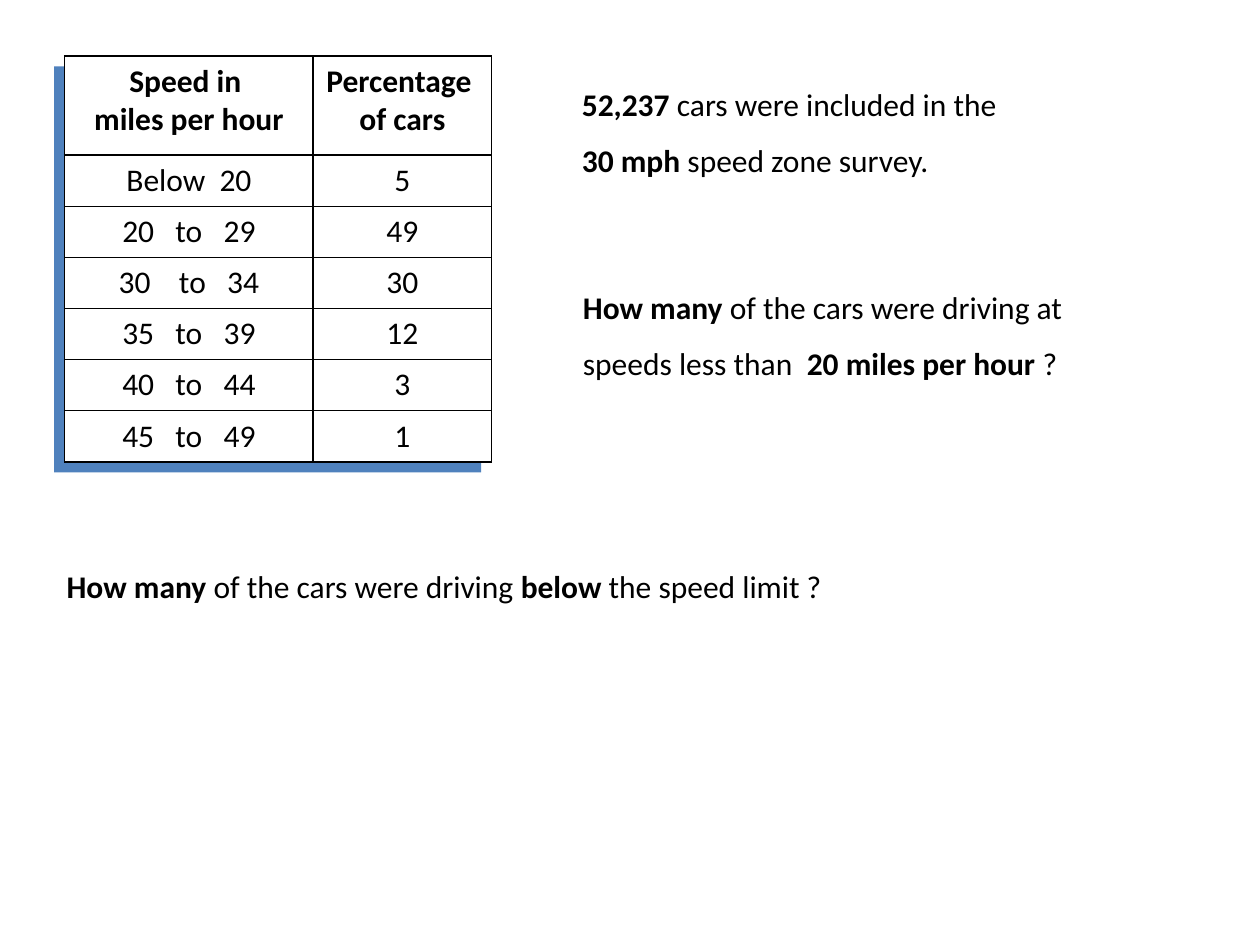
from lxml import etree
from pptx import Presentation
from pptx import util as u
from pptx.dml import color
from pptx.enum import shapes, text
from pptx.oxml import ns

COLORS = {"ink": "000000", "paper": "FFFFFF", "shade": "4F81BD"}
HEADER = (("Speed in ", "miles per hour"), ("Percentage ", "of cars"))
SPEEDS = (
    ("Below  20", 5),
    ("20   to   29", 49),
    ("30    to   34", 30),
    ("35   to   39", 12),
    ("40   to   44", 3),
    ("45   to   49", 1),
)
SURVEY = (
    (("52,237", True), (" cars were included in the", False)),
    (("30 mph ", True), ("speed zone survey.", False)),
)
BELOW_TWENTY = ((
    ("How many ", True),
    ("of the cars were driving at speeds less than  ", False),
    ("20 miles per hour ", True),
    ("?", False),
),)
BELOW_LIMIT = ((
    ("How many ", True),
    ("of the cars were driving ", False),
    ("below", True),
    (" the speed limit ?", False),
),)


def rgb(name):
    """Return the named colour."""
    return color.RGBColor.from_string(COLORS[name])


def write(frame, lines, align=None, spacing=None, size=18, font="Calibri"):
    """Fill a text frame with lines, each made of (wording, bold) spans."""
    for index, line in enumerate(lines):
        para = frame.add_paragraph() if index else frame.paragraphs[0]
        para.alignment, para.line_spacing = align, spacing
        for wording, bold in line:
            span = para.add_run()
            span.text = wording
            span.font.size, span.font.name = u.Pt(size), font
            span.font.bold = bold
            span.font.color.rgb = rgb("ink")


def outline(cell, width=1):
    """Draw a border on all four sides of a cell."""
    properties = cell._tc.get_or_add_tcPr()
    for index, side in enumerate(("lnL", "lnR", "lnT", "lnB")):
        line = etree.Element(ns.qn(f"a:{side}"), w=str(u.Pt(width)))
        fill = etree.SubElement(line, ns.qn("a:solidFill"))
        etree.SubElement(fill, ns.qn("a:srgbClr"), val=COLORS["ink"])
        properties.insert(index, line)


def add_backing(page, left, top, width, height, offset=6):
    """Place the solid block that peeks out below and left of the table."""
    block = page.shapes.add_shape(
        shapes.MSO_SHAPE.RECTANGLE,
        u.Pt(left - offset), u.Pt(top + offset), u.Pt(width), u.Pt(height))
    block.shadow.inherit = False
    block.fill.solid()
    block.fill.fore_color.rgb = rgb("shade")
    block.line.fill.background()


def add_speed_table(page, left, top, width, height, header=56.7, first=142):
    """Place the speed table and its backing in the given box."""
    add_backing(page, left, top, width, height)
    rows = [[[[(line, True)] for line in lines] for lines in HEADER]]
    rows += [[[[(str(value), False)]] for value in row] for row in SPEEDS]
    table = page.shapes.add_table(
        len(rows), len(HEADER),
        u.Pt(left), u.Pt(top), u.Pt(width), u.Pt(height)).table
    table.columns[0].width = u.Pt(first)
    table.columns[1].width = u.Pt(width - first)
    body = (height - header) / len(SPEEDS)
    for row_index, row in enumerate(rows):
        table.rows[row_index].height = u.Pt(body if row_index else header)
        for column_index, lines in enumerate(row):
            cell = table.cell(row_index, column_index)
            cell.fill.solid()
            cell.fill.fore_color.rgb = rgb("paper")
            outline(cell)
            write(cell.text_frame, lines, align=text.PP_ALIGN.CENTER)


def add_statement(page, lines, left, top, width, height):
    """Place a widely spaced statement or question in the given box."""
    box = page.shapes.add_textbox(
        u.Pt(left), u.Pt(top), u.Pt(width), u.Pt(height))
    box.text_frame.word_wrap = True
    box.text_frame.auto_size = text.MSO_AUTO_SIZE.SHAPE_TO_FIT_TEXT
    write(box.text_frame, lines, spacing=1.5)


def main():
    """Build and save the speed survey slide."""
    deck = Presentation()
    deck.slide_width, deck.slide_height = u.Pt(720), u.Pt(540)
    page = deck.slides.add_slide(deck.slide_layouts[6])
    add_speed_table(page, 37, 32, 244, 232)
    add_statement(page, BELOW_TWENTY, 326, 150, 300, 72.7)
    add_statement(page, SURVEY, 325.4, 34, 363.6, 69)
    add_statement(page, BELOW_LIMIT, 31, 309.6, 629, 40.3)
    deck.save("out.pptx")


if __name__ == "__main__":
    main()
